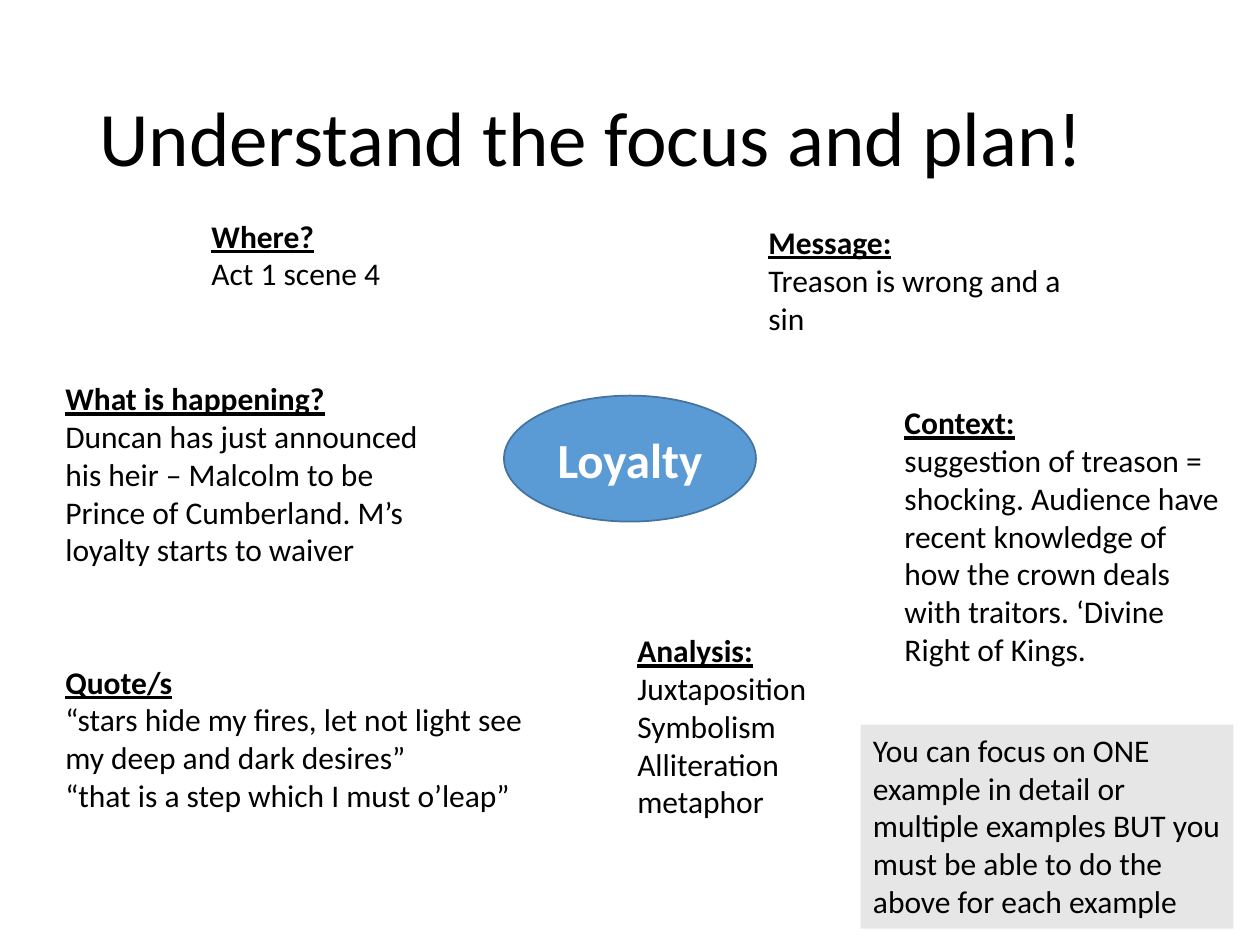
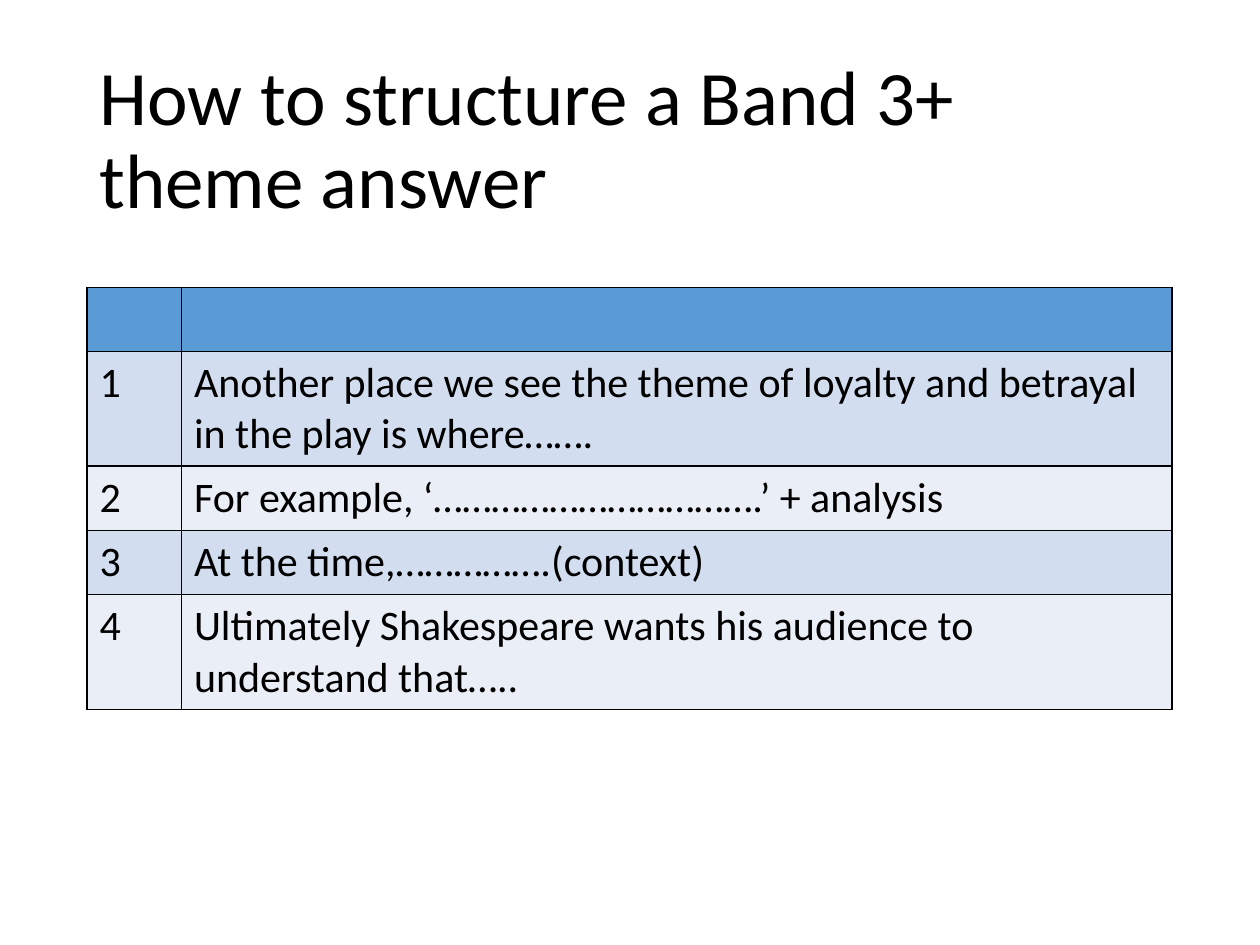
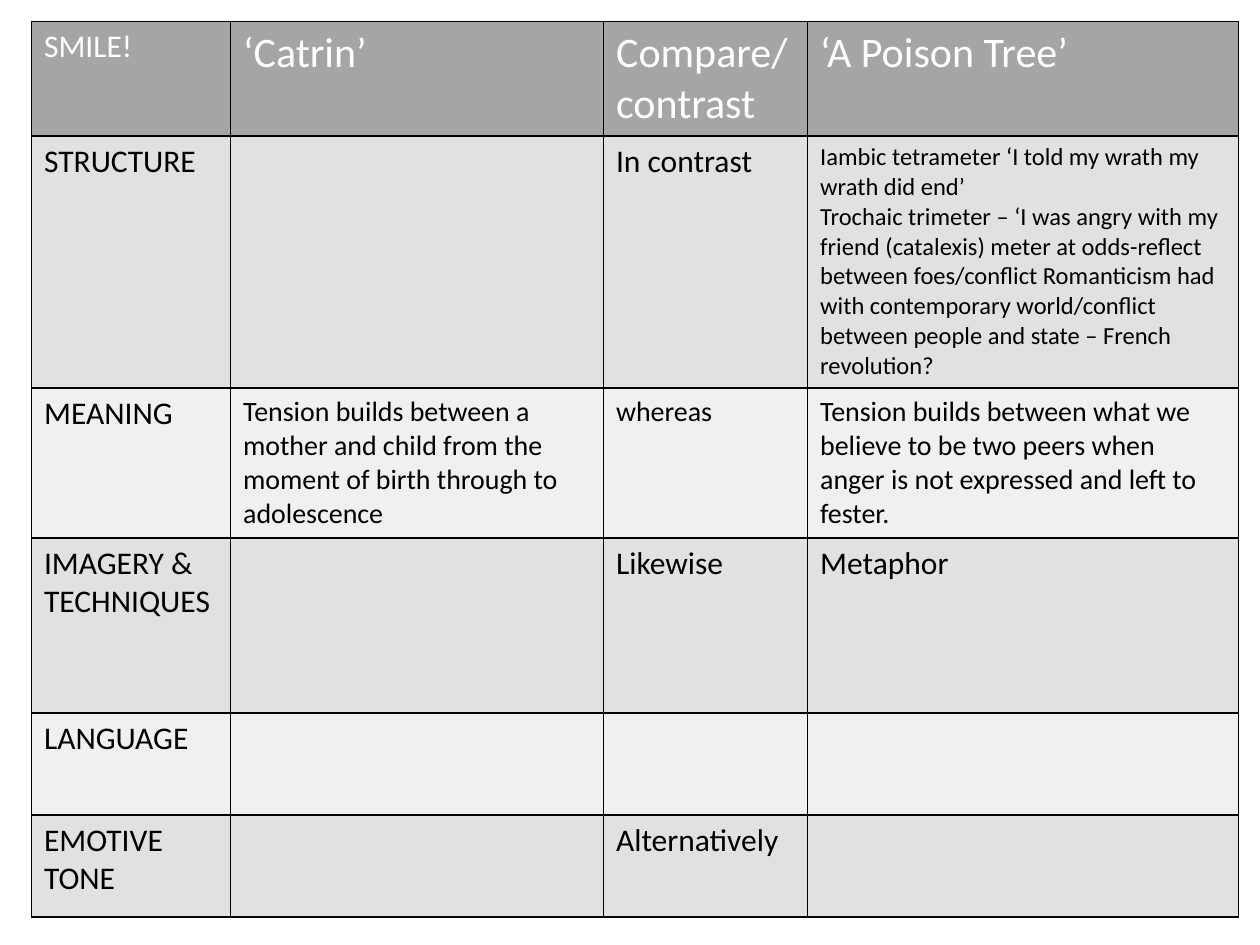
from lxml.etree import SubElement
from pptx import Presentation
from pptx.dml.color import RGBColor
from pptx.enum.shapes import MSO_SHAPE
from pptx.enum.text import MSO_ANCHOR, PP_ALIGN
from pptx.oxml.ns import qn
from pptx.util import Inches, Pt

FONT = "Calibri"
COLORS = {
    "black": "000000",
    "white": "FFFFFF",
    "blue": "5B9BD5",
    "blue_line": "43739E",
    "blue_band": "D2DEEF",
    "blue_pale": "EAEFF7",
    "note": "E7E6E6",
    "grey": "A5A5A5",
    "grey_band": "E1E1E1",
    "grey_pale": "F0F0F0",
}
BLUE_BANDS = ("blue", "blue_band", "blue_pale")
GREY_BANDS = ("grey", "grey_band", "grey_pale")

# Left, top, width, height, heading, lines
PLAN_NOTES = [
    (1.58, 1.67, 2.58, 0.71, "Where?", ["Act 1 scene 4"]),
    (0.42, 2.96, 3.08, 1.62, "What is happening?",
     ["Duncan has just announced his heir – Malcolm to be Prince of "
      "Cumberland. M’s loyalty starts to waiver"]),
    (0.42, 5.21, 4, 1.92, "Quote/s",
     ["“stars hide my fires, let not light see my deep and dark desires”",
      "“that is a step which I must o’leap”"]),
    (4.96, 4.96, 1.87, 1.62, "Analysis:",
     ["Juxtaposition", "Symbolism", "Alliteration", "metaphor"]),
    (7.08, 3.15, 2.71, 2.52, "Context:",
     ["suggestion of treason = shocking. Audience have recent knowledge of "
      "how the crown deals with traitors. ‘Divine Right of Kings."]),
    (6, 1.72, 2.67, 1.01, "Message:", ["Treason is wrong and a sin"]),
]
FOCUS_TIP = ("You can focus on ONE example in detail or multiple examples BUT "
             "you must be able to do the above for each example")

ANSWER_STEPS = [
    ["", ""],
    ["1", "Another place we see the theme of loyalty and betrayal in the play "
          "is where……."],
    ["2", "For example, ‘…………………………….’ + analysis"],
    ["3", "At the time,…………….(context)"],
    ["4", "Ultimately Shakespeare wants his audience to understand that….."],
]

POEM_COMPARISON = [
    ["SMILE!", "‘Catrin’", "Compare/ contrast", "‘A Poison Tree’"],
    ["STRUCTURE", "", "In contrast",
     "Iambic tetrameter ‘I told my wrath my wrath did end’\n"
     "Trochaic trimeter – ‘I was angry with my friend (catalexis) meter at "
     "odds-reflect between foes/conflict Romanticism had with contemporary "
     "world/conflict between people and state – French revolution?"],
    ["MEANING",
     "Tension builds between a mother and child from the moment of birth "
     "through to adolescence",
     "whereas",
     "Tension builds between what we believe to be two peers when anger is "
     "not expressed and left to fester."],
    ["IMAGERY & TECHNIQUES", "", "Likewise", "Metaphor"],
    ["LANGUAGE", "", "", ""],
    ["EMOTIVE TONE", "", "Alternatively", ""],
]
# Sizes of the cells that differ from the table's 18 points, by row and column
POEM_SIZES = {(0, 1): 24, (0, 2): 24, (0, 3): 24, (1, 3): 14,
              (2, 1): 16, (2, 2): 16, (2, 3): 16}


def rgb(name):
    return RGBColor.from_string(COLORS[name])


def write(tf, lines, size=18, color="black"):
    """Fill a text frame with one paragraph per line and return the paragraphs."""
    tf.text = "\n".join(lines)
    for p in tf.paragraphs:
        font = p.font
        font.name, font.size, font.bold = FONT, Pt(size), False
        font.color.rgb = rgb(color)
    return tf.paragraphs


def add_text(slide, box, lines, size=18):
    sp = slide.shapes.add_textbox(*map(Inches, box))
    sp.text_frame.word_wrap = True
    write(sp.text_frame, lines, size)
    return sp


def add_title(slide, text):
    sp = add_text(slide, (0.69, 0.4, 8.62, 1.45), [text], 44)
    sp.text_frame.vertical_anchor = MSO_ANCHOR.MIDDLE
    sp.text_frame.paragraphs[0].line_spacing = 0.9


def add_note(slide, left, top, width, height, heading, lines):
    sp = add_text(slide, (left, top, width, height), [heading, *lines])
    font = sp.text_frame.paragraphs[0].font
    font.bold = font.underline = True


def add_theme_oval(slide, text):
    sp = slide.shapes.add_shape(MSO_SHAPE.OVAL, *map(Inches, (4, 3.14, 2, 1)))
    sp.shadow.inherit = False
    sp.fill.solid()
    sp.fill.fore_color.rgb = rgb("blue")
    sp.line.color.rgb = rgb("blue_line")
    sp.line.width = Pt(1)
    sp.text_frame.vertical_anchor = MSO_ANCHOR.MIDDLE
    p = write(sp.text_frame, [text], 28, "white")[0]
    p.font.bold = True
    p.alignment = PP_ALIGN.CENTER


def add_borders(cell):
    tcPr = cell._tc.get_or_add_tcPr()
    for side in ("a:lnL", "a:lnR", "a:lnT", "a:lnB"):
        ln = SubElement(tcPr, qn(side), w=str(Pt(1)))
        fill = SubElement(ln, qn("a:solidFill"))
        SubElement(fill, qn("a:srgbClr"), val=COLORS["black"])


def add_banded_table(slide, left, top, widths, heights, rows, bands, size, sizes=None):
    """Draw a table; bands names the header, odd-row and even-row fills."""
    header, odd, even = bands
    box = (left, top, sum(widths), sum(heights))
    table = slide.shapes.add_table(len(heights), len(widths), *map(Inches, box)).table
    for column, width in zip(table.columns, widths):
        column.width = Inches(width)
    for row, height in zip(table.rows, heights):
        row.height = Inches(height)
    for i, texts in enumerate(rows):
        band = header if i == 0 else odd if i % 2 else even
        for j, text in enumerate(texts):
            cell = table.cell(i, j)
            add_borders(cell)
            cell.fill.solid()
            cell.fill.fore_color.rgb = rgb(band)
            write(cell.text_frame, text.split("\n"), (sizes or {}).get((i, j), size),
                  "black" if i else "white")


def build_plan(slide):
    add_title(slide, "Understand the focus and plan!")
    add_theme_oval(slide, "Loyalty")
    for note in PLAN_NOTES:
        add_note(slide, *note)
    tip = add_text(slide, (6.83, 5.75, 2.96, 1.62), [FOCUS_TIP])
    tip.fill.solid()
    tip.fill.fore_color.rgb = rgb("note")


def build_structure(slide):
    add_title(slide, "How to structure a Band 3+ theme answer")
    add_banded_table(slide, 0.69, 2.28, [0.75, 7.86], [0.51, 0.91, 0.51, 0.51, 0.91],
                     ANSWER_STEPS, BLUE_BANDS, 24)


def build_comparison(slide):
    add_banded_table(slide, 0.25, 0.17, [1.58, 2.96, 1.62, 3.42],
                     [0.91, 2, 1.19, 1.39, 0.81, 0.81],
                     POEM_COMPARISON, GREY_BANDS, 18, POEM_SIZES)


def main():
    prs = Presentation()
    prs.slide_width, prs.slide_height = Inches(10), Inches(7.5)
    for build in (build_plan, build_structure, build_comparison):
        build(prs.slides.add_slide(prs.slide_layouts[6]))
    prs.save("out.pptx")


if __name__ == "__main__":
    main()
